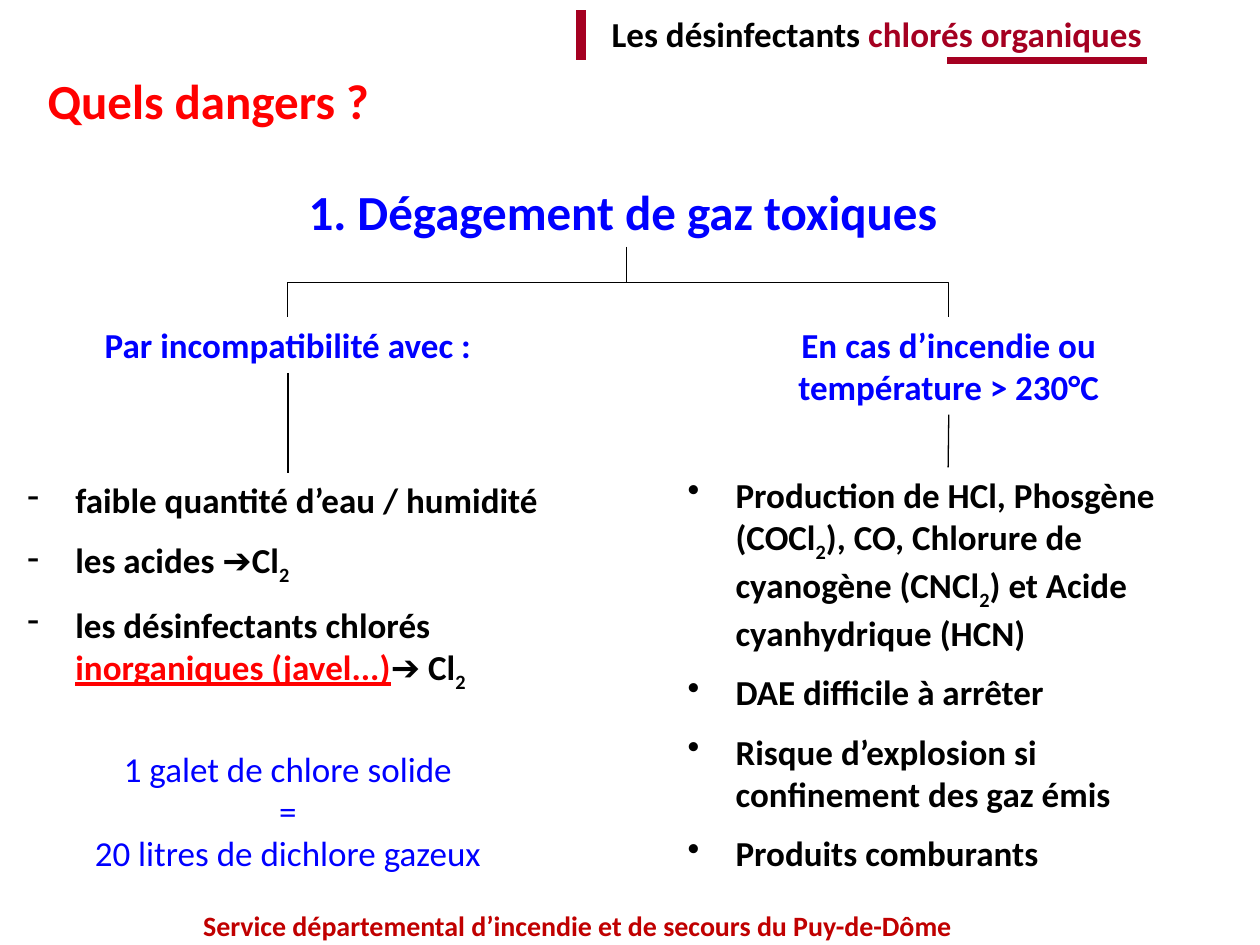
import pptx
import pptx.util
import pptx.dml.color
import pptx.enum.shapes
import pptx.enum.text
import pptx.oxml.ns
import lxml.etree

Inches, Pt = pptx.util.Inches, pptx.util.Pt
qn = pptx.oxml.ns.qn
Align = pptx.enum.text.PP_ALIGN
Kind = pptx.enum.shapes.MSO_CONNECTOR
BLACK, BLUE, RED, WINE, BRICK = "000000", "0000FF", "FF0000", "A50021", "C00000"
SUB = {"sub": True}


def paint(target, color):
    target.rgb = pptx.dml.color.RGBColor.from_string(color)


def write(place, paras, size, color, align=Align.LEFT, bold=True, wrap=True, mark=None, gap=0):
    """Add a text box; each paragraph is a list of (text, format) runs."""
    box = slide.shapes.add_textbox(*[Inches(n) for n in place])
    frame = box.text_frame
    frame.word_wrap = wrap
    frame.auto_size = pptx.enum.text.MSO_AUTO_SIZE.SHAPE_TO_FIT_TEXT
    for i, runs in enumerate(paras):
        para = frame.paragraphs[0] if i == 0 else frame.add_paragraph()
        para.alignment = align
        if i and gap:
            para.space_before = Pt(gap)
        if mark:
            props = para._p.get_or_add_pPr()
            props.set("marL", str(Inches(0.38)))
            props.set("indent", str(-Inches(0.38)))
            lxml.etree.SubElement(props, qn("a:buChar")).set("char", mark)
        for text, extra in runs:
            run = para.add_run()
            run.text = text
            look = {"name": "Calibri", "size": Pt(size), "bold": bold, "color": color, **extra}
            paint(run.font.color, look.pop("color"))
            if look.pop("sub", False):
                run._r.get_or_add_rPr().set("baseline", "-25000")
            for key, value in look.items():
                setattr(run.font, key, value)
    return box


deck = pptx.Presentation()
deck.slide_width, deck.slide_height = Inches(10), Inches(7.5)
slide = deck.slides.add_slide(deck.slide_layouts[6])

# Footer, header and titles
write((0, 7.16, 9.17, 0.37),
      [[("Service départemental d’incendie et de secours du Puy-de-Dôme", {})]],
      16, BRICK, Align.CENTER)
write((3.95, 0.05, 5.21, 0.44),
      [[("Les désinfectants ", {}), ("chlorés organiques", {"color": WINE})]],
      20, BLACK, Align.RIGHT)
write((0.28, 0.51, 2.78, 0.57), [[("Quels dangers ?", {})]], 28, RED, wrap=False)
write((2.35, 1.39, 5.25, 0.57), [[("1. Dégagement de gaz toxiques", {})]],
      28, BLUE, wrap=False)

# Branch labels
fire = write((6.12, 2.52, 2.82, 0.77),
             [[("En cas d’incendie ou température > 230°C", {})]], 20, BLUE, Align.CENTER)
mix = write((0.71, 2.52, 3.15, 0.44),
            [[("Par incompatibilité avec :", {})]], 20, BLUE, Align.CENTER)

# Lists under the branches
agents = write((0.12, 3.75, 4.33, 1.78), [
    [("faible quantité d’eau / humidité", {})],
    [("les acides ➔Cl", {}), ("2", SUB)],
    [("les désinfectants chlorés ", {}),
     ("inorganiques (javel...)", {"color": RED, "underline": True}),
     ("➔ Cl", {}), ("2", SUB)],
], 20, BLACK, mark="-", gap=10)
risks = write((5.36, 3.71, 4.33, 3.3), [
    [("Production de HCl, Phosgène (COCl", {}), ("2", SUB),
     ("), CO, Chlorure de cyanogène (CNCl", {}), ("2", SUB),
     (") et Acide cyanhydrique (HCN)", {})],
    [("DAE difficile à arrêter", {})],
    [("Risque d’explosion si confinement des gaz émis", {})],
    [("Produits comburants", {})],
], 20, BLACK, mark="•", gap=10)

# Equivalence note
note = ["1 galet de chlore solide", "=", "20 litres de dichlore gazeux"]
write((0.64, 5.88, 3.29, 1.11), [[(line, {})] for line in note],
      20, BLUE, Align.CENTER, bold=False, wrap=False)

# Lines: header bars, then the stems from labels to lists
lines = []
for ends, color, width, pair in [
    ((7.52, 0.48, 9.1, 0.48), WINE, 4.5, None),
    ((4.61, 0.08, 4.61, 0.48), WINE, 6, None),
    ((2.28, 2.96, 2.28, 3.75), BLACK, 0.75, (mix, agents)),
    ((7.53, 3.29, 7.53, 3.71), BLACK, 0.75, (fire, risks)),
]:
    line = slide.shapes.add_connector(Kind.STRAIGHT, *[Inches(n) for n in ends])
    if pair:
        line.begin_connect(pair[0], 2)
        line.end_connect(pair[1], 0)
    lines.append((line, color, width))

# Elbows from the title to each label, turned so that they leave downwards
root, top, low = 4.97, 1.96, 2.52
for goal, turn in [(2.28, 90), (7.53, 270)]:
    midx, midy = (root + goal) / 2, (top + low) / 2
    halfw, halfh = (low - top) / 2, abs(goal - root) / 2
    side = 1 if turn == 90 else -1
    ends = (midx - side * halfw, midy - halfh, midx + side * halfw, midy + halfh)
    elbow = slide.shapes.add_connector(Kind.ELBOW, *[Inches(n) for n in ends])
    elbow._element.spPr.find(qn("a:xfrm")).set("rot", str(turn * 60000))
    lines.append((elbow, BLACK, 0.75))

for line, color, width in lines:
    paint(line.line.color, color)
    line.line.width = Pt(width)
    lxml.etree.SubElement(line._element.spPr, qn("a:effectLst"))

deck.save("out.pptx")
